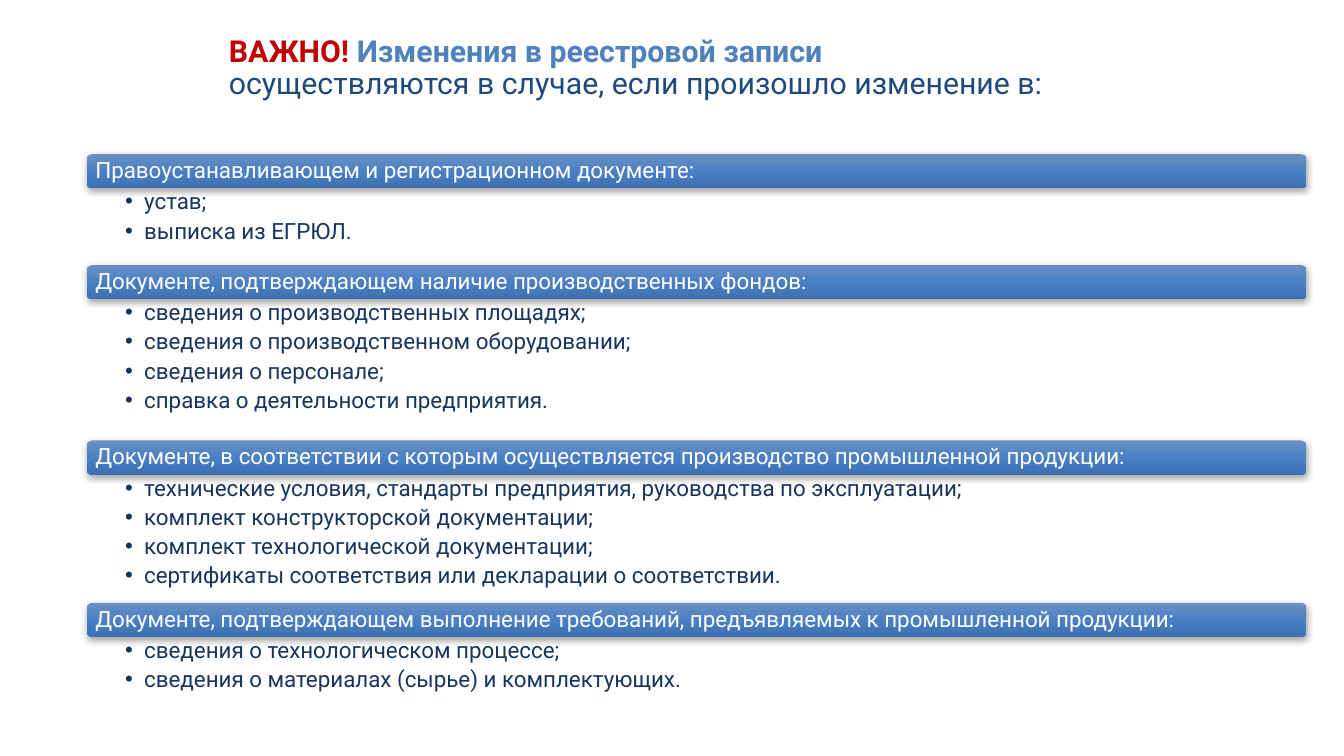
"""Build the slide on when a registry record has to be changed."""
from dataclasses import dataclass
from lxml import etree
from pptx import Presentation
from pptx import util as u
from pptx.dml.color import RGBColor
from pptx.enum import shapes, text
from pptx.oxml import ns

TITLE = [
    [("ВАЖНО! ", "alert", True), ("Изменения в реестровой записи", "accent", True)],
    [("осуществляются в случае, если произошло изменение в:", "navy", False)],
]
GROUPS = [
    ("Правоустанавливающем и регистрационном документе:", 0.76,
     ["устав;", "выписка из ЕГРЮЛ."]),
    ("Документе, подтверждающем наличие производственных фондов:", 1.4,
     ["сведения о производственных площадях;",
      "сведения о производственном оборудовании;",
      "сведения о персонале;",
      "справка о деятельности предприятия."]),
    ("Документе, в соответствии с которым осуществляется производство промышленной продукции:", 1.27,
     ["технические условия, стандарты предприятия, руководства по эксплуатации;",
      "комплект конструкторской документации;",
      "комплект технологической документации;",
      "сертификаты соответствия или декларации о соответствии."]),
    ("Документе, подтверждающем выполнение требований, предъявляемых к промышленной продукции:", 0.64,
     ["сведения о технологическом процессе;",
      "сведения о материалах (сырье) и комплектующих."]),
]
LEFT, TOP, WIDTH, BAR = 0.86, 1.53, 12.1, 0.34


@dataclass(frozen=True)
class Theme:
    """Hold the colours and type sizes."""
    font: str = "Roboto"
    head: float = 21.6
    body: float = 16
    alert: str = "C00000"
    accent: str = "4F81BD"
    navy: str = "1F497D"
    ink: str = "17365D"
    white: str = "FFFFFF"
    shade: str = "000000"
    grad: tuple = ((0, "6A90C5"), (50, "4A80C3"), (100, "3C72B2"))


THEME = Theme()


def place(shape, left, top, width, height):
    """Move a shape to a spot given in inches."""
    shape.left, shape.top = u.Inches(left), u.Inches(top)
    shape.width, shape.height = u.Inches(width), u.Inches(height)


def add_xml(parent, tag, **attrs):
    """Append a drawing element and return it."""
    return etree.SubElement(parent, ns.qn("a:" + tag), attrs)


def write(shape, lines, size=THEME.body, space=0.9, after=0, bullet=False,
          broken=False, anchor=text.MSO_ANCHOR.MIDDLE, inset=(0.1, 0.05, 0.1, 0.05)):
    """Fill a shape with lines of (words, colour, bold) runs."""
    frame = shape.text_frame
    frame.word_wrap, frame.auto_size = True, text.MSO_AUTO_SIZE.NONE
    frame.vertical_anchor = anchor
    (frame.margin_left, frame.margin_top,
     frame.margin_right, frame.margin_bottom) = map(u.Inches, inset)
    for row, line in enumerate(lines):
        if row == 0:
            para = frame.paragraphs[0]
        elif broken:
            para.add_line_break()
        else:
            para = frame.add_paragraph()
        if row == 0 or not broken:
            para.alignment, para.line_spacing = text.PP_ALIGN.LEFT, space
            para.space_before, para.space_after = u.Pt(0), u.Pt(after)
            if bullet:
                props = para._p.get_or_add_pPr()
                props.set("marL", str(u.Inches(0.19)))
                props.set("indent", str(u.Inches(-0.19)))
                add_xml(props, "buFont", typeface="Arial")
                add_xml(props, "buChar", char="•")
        for words, hue, bold in line:
            run = para.add_run()
            run.text = words
            run.font.name, run.font.size, run.font.bold = THEME.font, u.Pt(size), bold
            run.font.color.rgb = RGBColor.from_string(getattr(THEME, hue))


def style(bar):
    """Give a bar its gradient and soft shadow."""
    bar.line.fill.background()
    props = bar._element.spPr
    grad = add_xml(props, "gradFill", rotWithShape="1")
    stops = add_xml(grad, "gsLst")
    for pos, hue in THEME.grad:
        add_xml(add_xml(stops, "gs", pos=str(pos * 1000)), "srgbClr", val=hue)
    add_xml(grad, "lin", ang="5400000", scaled="0")
    props.find(ns.qn("a:ln")).addprevious(grad)
    glow = add_xml(add_xml(props, "effectLst"), "outerShdw", blurRad=str(u.Pt(4.5)),
                   dist=str(u.Pt(1.5)), dir="5400000", rotWithShape="0")
    add_xml(add_xml(glow, "srgbClr", val=THEME.shade), "alpha", val="35000")


def main():
    """Lay out the title and the four groups."""
    deck = Presentation()
    deck.slide_width, deck.slide_height = u.Inches(13.33), u.Inches(7.5)
    slide = deck.slides.add_slide(deck.slide_layouts.get_by_name("Comparison"))
    title = slide.shapes.title
    place(title, 2.17, 0.3, 9, 0.77)
    write(title, TITLE, size=THEME.head, space=0.89, broken=True)
    spots = [hold for hold in slide.placeholders if 1 <= hold.placeholder_format.idx <= 4]
    for hold in list(slide.placeholders)[5:]:
        hold._element.getparent().remove(hold._element)
    top = TOP
    for spot, (name, height, items) in zip(spots, GROUPS):
        bar = slide.shapes.add_shape(shapes.MSO_SHAPE.ROUNDED_RECTANGLE, 0, 0, 0, 0)
        place(bar, LEFT, top, WIDTH, BAR)
        style(bar)
        write(bar, [[(name, "white", False)]], inset=(0.07, 0, 0.07, 0))
        place(spot, LEFT, top + BAR, WIDTH, height)
        write(spot, [[(item, "ink", False)] for item in items], after=3.6, bullet=True,
              anchor=text.MSO_ANCHOR.TOP, inset=(0.38, 0.02, 0.12, 0.02))
        top += BAR + height
    deck.save("out.pptx")


if __name__ == "__main__":
    main()
